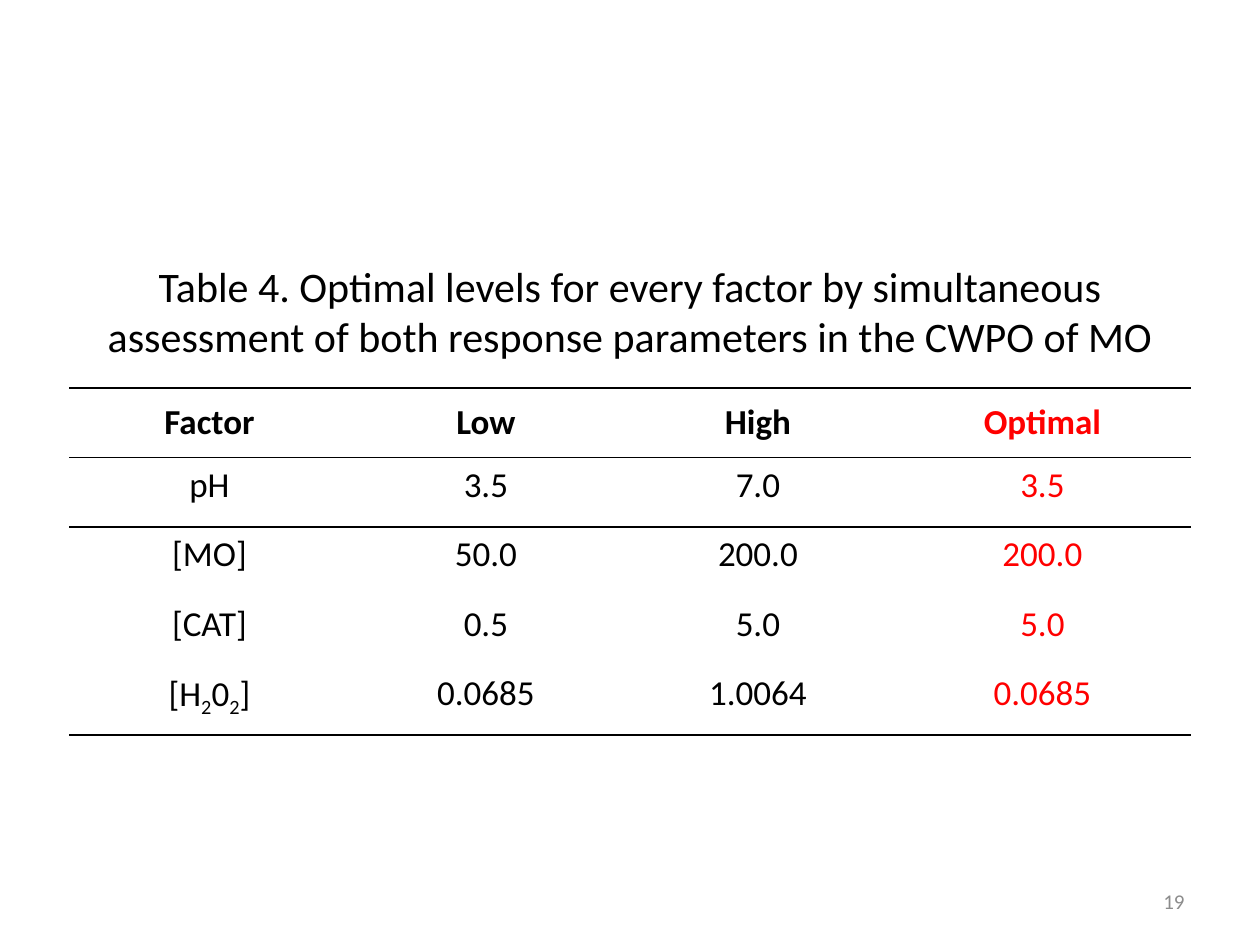
from lxml.etree import SubElement
from pptx import Presentation
from pptx.dml.color import RGBColor
from pptx.enum.text import MSO_ANCHOR, PP_ALIGN
from pptx.oxml.ns import qn
from pptx.util import Emu, Pt

TITLE = ("Table 4. Optimal levels for every factor by simultaneous "
         "assessment of both response parameters in the CWPO of MO")
ROWS = [
    ("Factor", "Low", "High", "Optimal"),
    ("pH", "3.5", "7.0", "3.5"),
    ("[MO]", "50.0", "200.0", "200.0"),
    ("[CAT]", "0.5", "5.0", "5.0"),
    (("[H", "2", "0", "2", "]"), "0.0685", "1.0064", "0.0685"),
]
PAGE = "19"

TITLE_BOX = (63, 253, 1134, 115)
TABLE_BOX = (69, 388, 1122, 347)
PAGE_BOX = (903, 876, 294, 50)
COLS = (281, 272, 272, 297)
RULES = {0: ("a:lnT", "a:lnB"), 1: ("a:lnT",), len(ROWS) - 1: ("a:lnB",)}
NO_STYLE = "{2D5ABB26-0587-4C30-8999-92F81FD0307C}"
FONT = "Calibri"
BLACK = RGBColor(0x00, 0x00, 0x00)
RED = RGBColor(0xFF, 0x00, 0x00)
GRAY = RGBColor(0x8C, 0x8C, 0x8C)


def px(n):
    return Emu(round(n * 914400 / 126))


def place(sp, box):
    sp.left, sp.top, sp.width, sp.height = map(px, box)


def format_paragraph(p, size, color, align, bold=False):
    p.alignment = align
    for r in p.runs:
        r.font.name = FONT
        r.font.size = Pt(size)
        r.font.bold = bold
        r.font.color.rgb = color


def add_rule(cell, tag):
    ln = SubElement(cell._tc.get_or_add_tcPr(), qn(tag), w=str(Pt(1)))
    fill = SubElement(ln, qn("a:solidFill"))
    SubElement(fill, qn("a:srgbClr"), val=str(BLACK))


def fill_cell(cell, text, row, col):
    cell.margin_left = cell.margin_right = px(4)
    cell.margin_top = cell.margin_bottom = 0
    p = cell.text_frame.paragraphs[0]
    parts = (text,) if isinstance(text, str) else text
    for i, part in enumerate(parts):
        r = p.add_run()
        r.text = part
        if i % 2:
            r.font._element.set("baseline", "-25000")
    color = RED if col == len(COLS) - 1 else BLACK
    format_paragraph(p, 20, color, PP_ALIGN.CENTER, row == 0)
    if row == 0:
        cell.vertical_anchor = MSO_ANCHOR.MIDDLE
    else:
        p.line_spacing = 1.15
    for tag in RULES.get(row, ()):
        add_rule(cell, tag)
    cell.fill.background()


def main():
    prs = Presentation()
    prs.slide_width, prs.slide_height = px(1260), px(945)
    s = prs.slides.add_slide(prs.slide_layouts[5])

    title = s.shapes.title
    place(title, TITLE_BOX)
    title.text_frame.text = TITLE
    title.text_frame.vertical_anchor = MSO_ANCHOR.MIDDLE
    format_paragraph(title.text_frame.paragraphs[0], 24, BLACK, PP_ALIGN.CENTER)

    table = s.shapes.add_table(len(ROWS), len(COLS), *map(px, TABLE_BOX)).table
    table.first_row = table.horz_banding = False
    table._tbl.tblPr.find(qn("a:tableStyleId")).text = NO_STYLE
    for column, width in zip(table.columns, COLS):
        column.width = px(width)
    for i, row in enumerate(ROWS):
        for j, text in enumerate(row):
            fill_cell(table.cell(i, j), text, i, j)

    page = s.shapes.add_textbox(*map(px, PAGE_BOX))
    tf = page.text_frame
    tf.word_wrap = True
    tf.vertical_anchor = MSO_ANCHOR.MIDDLE
    tf.text = PAGE
    format_paragraph(tf.paragraphs[0], 12, GRAY, PP_ALIGN.RIGHT)

    prs.save("out.pptx")


if __name__ == "__main__":
    main()
